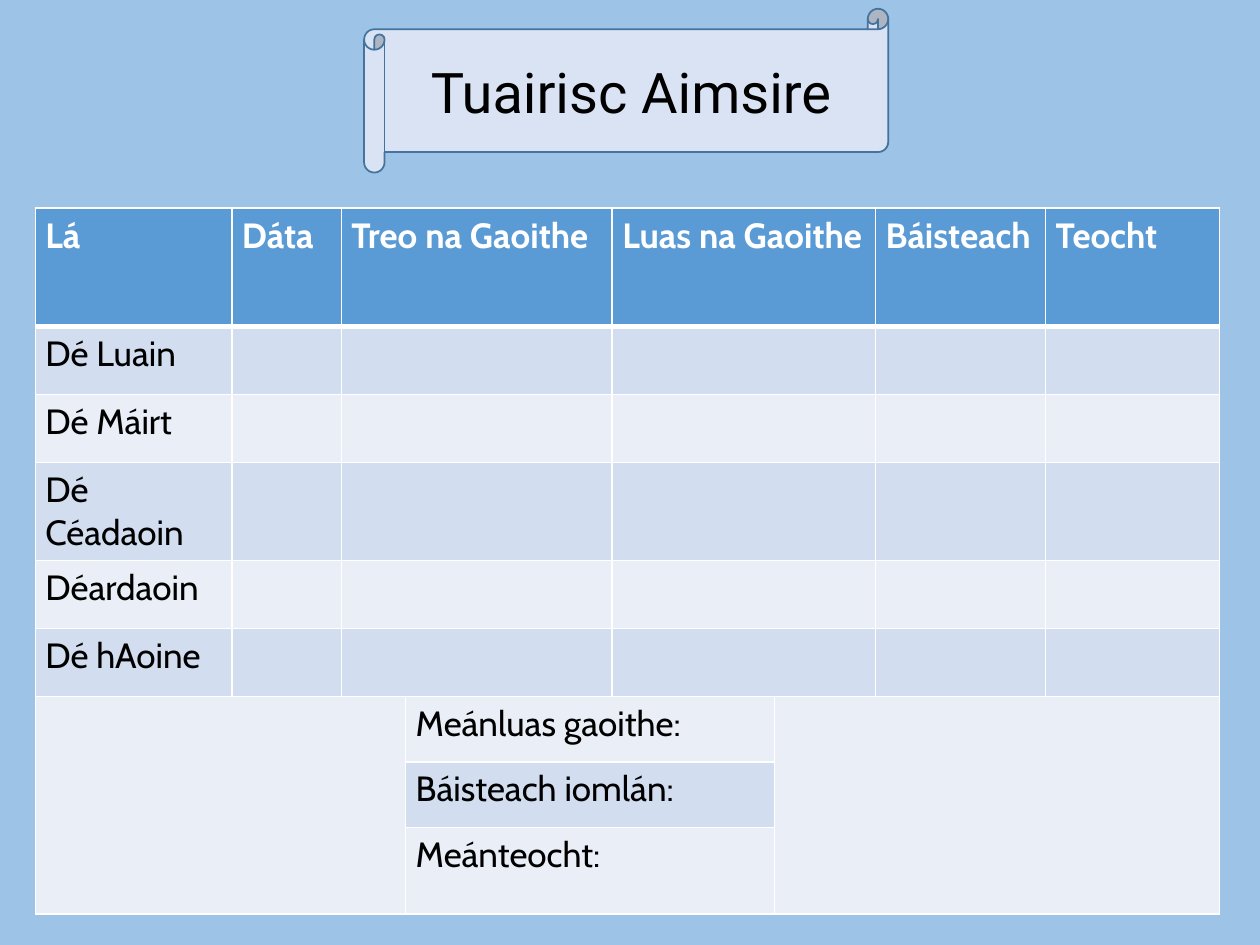
from lxml.etree import SubElement
from pptx import Presentation
from pptx.dml.color import RGBColor
from pptx.enum.shapes import MSO_SHAPE as Shape
from pptx.enum.text import MSO_ANCHOR as Anchor, PP_ALIGN as Align
from pptx.oxml.ns import qn
from pptx.util import Inches, Pt

WHITE, BLACK = "FFFFFF", "000000"
HEADER, DARK_BAND, LIGHT_BAND = "5B9BD5", "D2DEEF", "EAEFF7"
COLUMN_WIDTHS = [1.56, 0.87, 0.51, 1.64, 1.29, 0.8, 1.35, 1.38]
ROW_HEIGHTS = [0.94, 0.54, 0.54, 0.76, 0.54, 0.54, 0.52, 0.52, 0.69]
HEADINGS = {0: "Lá", 1: "Dáta", 2: "Treo na Gaoithe", 4: "Luas na Gaoithe",
            6: "Báisteach", 7: "Teocht"}
DAYS = ["Dé Luain", "Dé Máirt", "Dé Céadaoin", "Déardaoin", "Dé hAoine"]
SUMMARIES = ["Meánluas gaoithe:", "Báisteach iomlán:", "Meánteocht:"]
SUMMARY_ROW = 1 + len(DAYS)
SUMMARY_COLUMN = 3


def paint(fill, color):
    fill.solid()
    fill.fore_color.rgb = RGBColor.from_string(color)


def write(frame, text, font, size, color, bold=False):
    frame.text = text
    for span in frame.paragraphs[0].runs:
        span.font.name = font
        span.font.size = Pt(size)
        span.font.bold = bold
        span.font.color.rgb = RGBColor.from_string(color)


def add_borders(cell, row):
    properties = cell._tc.get_or_add_tcPr()
    widths = {"L": 1, "R": 1, "T": 3 if row == 1 else 1, "B": 3 if row == 0 else 1}
    for index, (side, width) in enumerate(widths.items()):
        line = SubElement(properties, qn(f"a:ln{side}"), w=str(Pt(width)))
        fill = SubElement(line, qn("a:solidFill"))
        SubElement(fill, qn("a:srgbClr"), val=WHITE)
        properties.insert(index, line)


def band_color(row, column):
    if row == 0:
        return HEADER
    if row >= SUMMARY_ROW and not SUMMARY_COLUMN <= column <= SUMMARY_COLUMN + 1:
        return LIGHT_BAND
    return DARK_BAND if row % 2 else LIGHT_BAND


def cell_texts():
    texts = {(0, column): heading for column, heading in HEADINGS.items()}
    texts.update({(row, 0): day for row, day in enumerate(DAYS, 1)})
    texts.update({(row, SUMMARY_COLUMN): label
                  for row, label in enumerate(SUMMARIES, SUMMARY_ROW)})
    return texts


def merge_cells(table):
    last = len(ROW_HEIGHTS) - 1
    for row in range(SUMMARY_ROW):
        for column in (2, 4):
            table.cell(row, column).merge(table.cell(row, column + 1))
    for row in range(SUMMARY_ROW, last + 1):
        table.cell(row, SUMMARY_COLUMN).merge(table.cell(row, SUMMARY_COLUMN + 1))
    for column in (0, 5):
        table.cell(SUMMARY_ROW, column).merge(table.cell(last, column + 2))


def add_weather_table(page):
    table = page.shapes.add_table(
        len(ROW_HEIGHTS), len(COLUMN_WIDTHS), Inches(0.28), Inches(1.65),
        Inches(sum(COLUMN_WIDTHS)), Inches(sum(ROW_HEIGHTS))).table
    for column, width in zip(table.columns, COLUMN_WIDTHS):
        column.width = Inches(width)
    for row, height in zip(table.rows, ROW_HEIGHTS):
        row.height = Inches(height)
    merge_cells(table)
    texts = cell_texts()
    for row in range(len(ROW_HEIGHTS)):
        for column in range(len(COLUMN_WIDTHS)):
            cell = table.cell(row, column)
            cell.margin_left = cell.margin_right = Inches(0.08)
            cell.margin_top = cell.margin_bottom = Inches(0.05)
            paint(cell.fill, band_color(row, column))
            add_borders(cell, row)
            if (row, column) in texts:
                write(cell.text_frame, texts[row, column], "Cabin", 20,
                      BLACK if row else WHITE, bold=row == 0)


def add_title_scroll(page):
    scroll = page.shapes.add_shape(Shape.HORIZONTAL_SCROLL, Inches(2.89),
                                   Inches(0.07), Inches(4.16), Inches(1.3))
    scroll.shadow.inherit = False
    paint(scroll.fill, "DAE3F3")
    paint(scroll.line.fill, "43739E")
    scroll.line.width = Pt(1)
    frame = scroll.text_frame
    frame.word_wrap = True
    frame.vertical_anchor = Anchor.MIDDLE
    write(frame, "Tuairisc Aimsire", "Roboto", 32, BLACK)
    frame.paragraphs[0].alignment = Align.CENTER


def main():
    deck = Presentation()
    deck.slide_width, deck.slide_height = Inches(10), Inches(7.5)
    page = deck.slides.add_slide(deck.slide_layouts[6])
    paint(page.background.fill, "9DC3E6")
    add_weather_table(page)
    add_title_scroll(page)
    deck.save("out.pptx")


if __name__ == "__main__":
    main()
